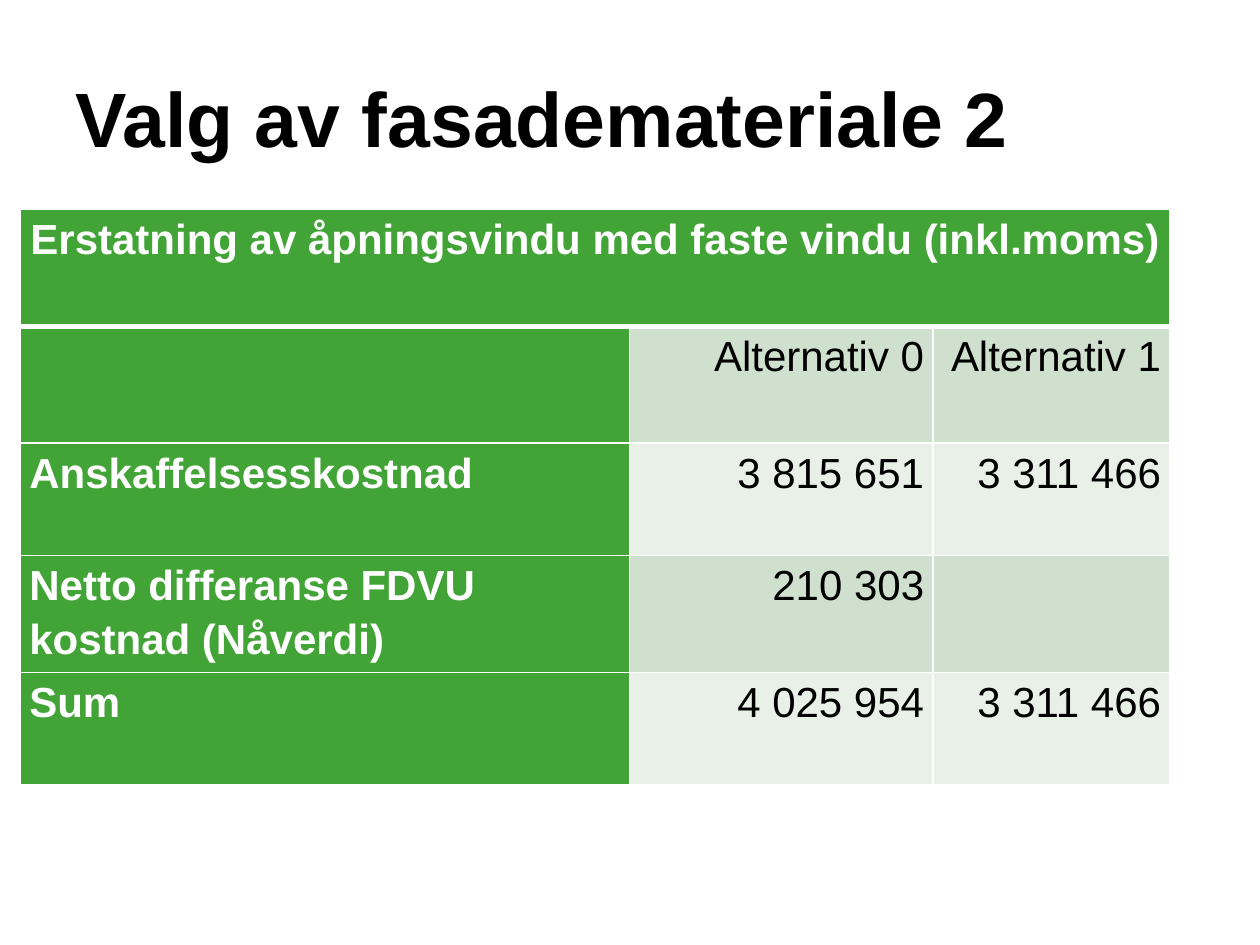
from lxml.etree import SubElement
from pptx import Presentation
from pptx.dml.color import RGBColor
from pptx.enum.text import MSO_ANCHOR, PP_ALIGN
from pptx.oxml.ns import qn
from pptx.util import Pt

GREEN, WHITE, BLACK = "42A437", "FFFFFF", "000000"
BANDS = ["CFE0CE", "E9F0E8"]
COLS = [347.8, 173.5, 135.4]
ROWS = [66.7, 66.7, 64.4, 66.7, 64.4]
COSTS = [
    ["Erstatning av åpningsvindu med faste vindu (inkl.moms)", "", ""],
    ["", "Alternativ 0", "Alternativ 1"],
    ["Anskaffelsesskostnad", "3 815 651", "3 311 466"],
    ["Netto differanse FDVU kostnad (Nåverdi)", "210 303", ""],
    ["Sum", "4 025 954", "3 311 466"],
]


def rgb(value):
    """Turn a hex string into a colour."""
    return RGBColor.from_string(value)


def write(tf, text, size=24, color=BLACK, bold=False, align=PP_ALIGN.LEFT, spacing=1.0):
    """Write one formatted paragraph into a text frame."""
    p = tf.paragraphs[0]
    p.alignment = align
    p.line_spacing = spacing
    r = p.add_run()
    r.text = text
    r.font.name = "Arial"
    r.font.size = Pt(size)
    r.font.bold = bold
    r.font.color.rgb = rgb(color)


def set_borders(cell, **widths):
    """Draw white borders of the given widths on the sides L, R, T and B."""
    tc_pr = cell._tc.get_or_add_tcPr()
    for side, width in widths.items():
        ln = SubElement(tc_pr, qn(f"a:ln{side}"), w=str(Pt(width)))
        fill = SubElement(ln, qn("a:solidFill"))
        SubElement(fill, qn("a:srgbClr"), val=WHITE)


def add_title(s, text, left, top, width, height):
    """Add the slide title."""
    tf = s.shapes.add_textbox(Pt(left), Pt(top), Pt(width), Pt(height)).text_frame
    tf.word_wrap = True
    tf.vertical_anchor = MSO_ANCHOR.MIDDLE
    write(tf, text, size=44, bold=True)


def add_cost_table(s, rows, left, top):
    """Add the cost table with a merged heading and banded value cells."""
    table = s.shapes.add_table(len(ROWS), len(COLS), Pt(left), Pt(top),
                               Pt(sum(COLS)), Pt(sum(ROWS))).table
    for column, width in zip(table.columns, COLS):
        column.width = Pt(width)
    for row, height in zip(table.rows, ROWS):
        row.height = Pt(height)
    for i, texts in enumerate(rows):
        for j, text in enumerate(texts):
            cell = table.cell(i, j)
            label = i == 0 or j == 0
            set_borders(cell, L=1, R=1, T=3 if i == 1 else 1, B=3 if i == 0 else 1)
            cell.fill.solid()
            cell.fill.fore_color.rgb = rgb(GREEN if label else BANDS[(i - 1) % 2])
            cell.margin_left = cell.margin_right = Pt(5)
            cell.margin_top = cell.margin_bottom = Pt(0)
            if text:
                align = PP_ALIGN.CENTER if i == 0 else PP_ALIGN.LEFT if label else PP_ALIGN.RIGHT
                write(cell.text_frame, text, color=WHITE if label else BLACK,
                      bold=label, align=align, spacing=1.15)
    table.cell(0, 0).merge(table.cell(0, len(COLS) - 1))


def main():
    """Build the slide and save it."""
    prs = Presentation()
    prs.slide_width, prs.slide_height = Pt(720), Pt(540)
    s = prs.slides.add_slide(prs.slide_layouts[6])
    add_title(s, "Valg av fasademateriale 2", 36, 21.6, 648, 90)
    add_cost_table(s, COSTS, 11.8, 119.8)
    prs.save("out.pptx")


if __name__ == "__main__":
    main()
